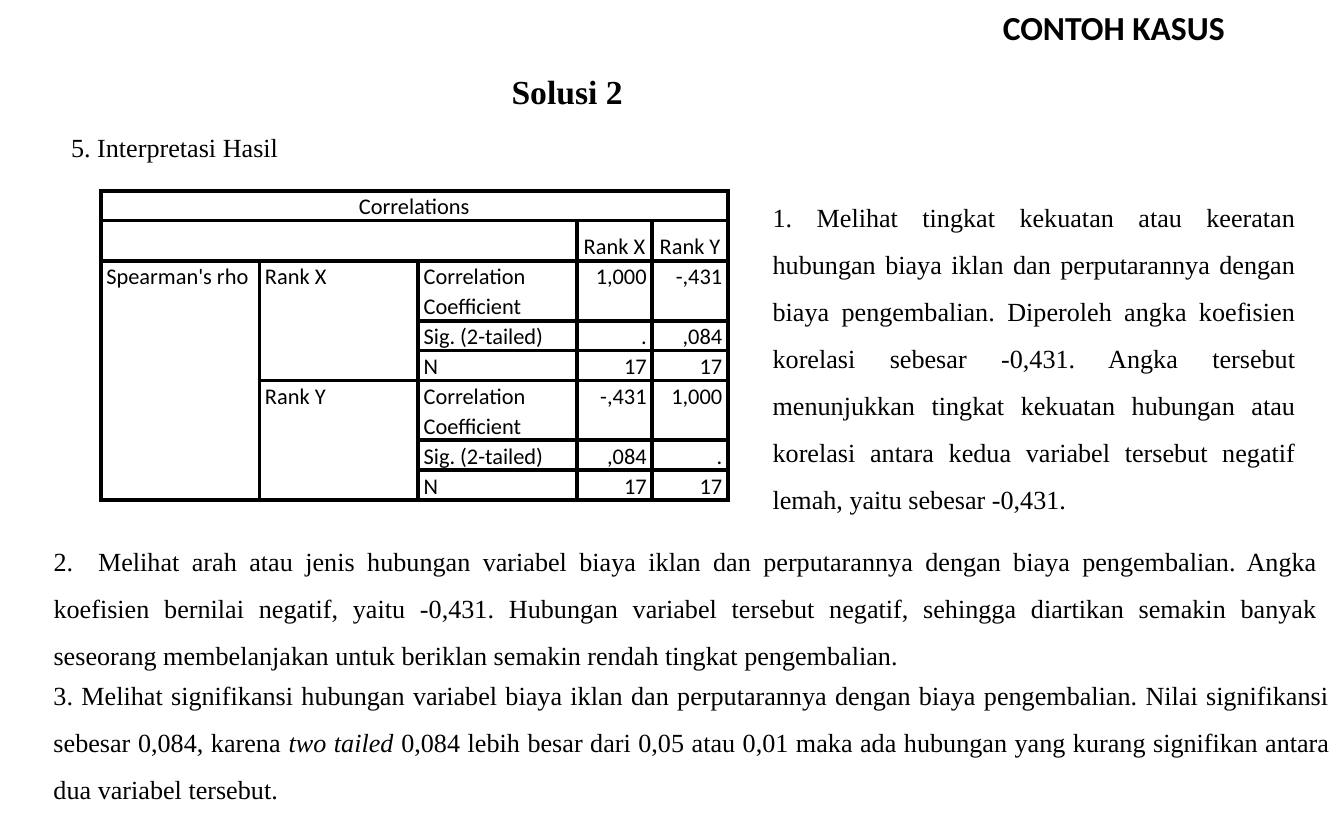
from lxml.etree import SubElement
from pptx import Presentation
from pptx.dml.color import RGBColor
from pptx.enum.text import MSO_ANCHOR, MSO_AUTO_SIZE, PP_ALIGN
from pptx.oxml.ns import qn
from pptx.util import Pt

COLORS = {"ink": "000000", "paper": "FFFFFF"}
SERIF = "Times New Roman"
SANS = "Calibri"


def write(frame, text, font=SERIF, size=14, bold=False, align=PP_ALIGN.JUSTIFY,
          anchor=MSO_ANCHOR.TOP, spacing=1.5, after=0, level=0, indent=0):
    frame.word_wrap = True
    frame.vertical_anchor = anchor
    para = frame.paragraphs[0]
    para.alignment = align
    para.line_spacing = spacing
    para.space_after = Pt(after)
    para.level = level
    if indent:
        properties = para._p.get_or_add_pPr()
        properties.set("marL", str(Pt(indent)))
        properties.set("indent", "0")
    for number, part in enumerate(text.split("*")):
        if part:
            span = para.add_run()
            span.text = part
            span.font.name = font
            span.font.size = Pt(size)
            span.font.bold = bold
            span.font.italic = number % 2 == 1
            span.font.color.rgb = RGBColor.from_string(COLORS["ink"])


deck = Presentation()
deck.slide_width, deck.slide_height = Pt(720), Pt(450)
page = deck.slides.add_slide(deck.slide_layouts[5])
page.background.fill.solid()
page.background.fill.fore_color.rgb = RGBColor.from_string(COLORS["paper"])

title = page.shapes.title
title.left, title.top, title.width, title.height = Pt(530), Pt(0), Pt(362), Pt(29)
title.text_frame.auto_size = MSO_AUTO_SIZE.NONE
write(title.text_frame, "CONTOH KASUS", font=SANS, size=18, bold=True,
      align=PP_ALIGN.LEFT, spacing=1.0)

heading = {"size": 18, "bold": True, "after": 8}
finding = {"level": 3, "indent": 108}
boxes = [
    (267, 23.8, 446.4, 36.7, "Solusi 2", heading),
    (31, 58.3, 446.4, 30.2, "5. Interpretasi Hasil", {"after": 8}),
    (298.8, 95.8, 402.5, 202.3,
     "1. Melihat tingkat kekuatan atau keeratan hubungan biaya iklan dan perputarannya "
     "dengan biaya pengembalian. Diperoleh angka koefisien korelasi sebesar -0,431. "
     "Angka tersebut menunjukkan tingkat kekuatan hubungan atau korelasi antara kedua "
     "variabel tersebut negatif lemah, yaitu sebesar -0,431.", finding),
    (-86.4, 352.1, 806.4, 80.6,
     "3. Melihat signifikansi hubungan variabel biaya iklan dan perputarannya dengan "
     "biaya pengembalian. Nilai signifikansi sebesar 0,084, karena *two tailed *0,084 "
     "lebih besar dari 0,05 atau 0,01 maka ada hubungan yang kurang signifikan antara "
     "dua variabel tersebut.", finding),
    (-86.4, 280.1, 799.9, 80.6,
     "2.  Melihat arah atau jenis hubungan variabel biaya iklan dan perputarannya dengan "
     "biaya pengembalian. Angka koefisien bernilai negatif, yaitu -0,431. Hubungan "
     "variabel tersebut negatif, sehingga diartikan semakin banyak seseorang "
     "membelanjakan untuk beriklan semakin rendah tingkat pengembalian.", finding),
]
for left, top, width, height, text, style in boxes:
    box = page.shapes.add_textbox(Pt(left), Pt(top), Pt(width), Pt(height))
    write(box.text_frame, text, **style)

rows = [
    ["Correlations", "", "", "", ""],
    ["", "", "", "Rank X", "Rank Y"],
    ["Spearman's rho", "Rank X", "Correlation Coefficient", "1,000", "-,431"],
    ["", "", "Sig. (2-tailed)", ".", ",084"],
    ["", "", "N", "17", "17"],
    ["", "Rank Y", "Correlation Coefficient", "-,431", "1,000"],
    ["", "", "Sig. (2-tailed)", ",084", "."],
    ["", "", "N", "17", "17"],
]
widths = [85, 85, 85, 40.5, 40.5]
line = 16
heights = [line * 2 if row[2].startswith("Correlation") else line for row in rows]
table = page.shapes.add_table(len(rows), len(widths), Pt(54), Pt(102.2),
                              Pt(sum(widths)), Pt(sum(heights))).table
table.first_row = table.horz_banding = False
for column, width in zip(table.columns, widths):
    column.width = Pt(width)
for row, height in zip(table.rows, heights):
    row.height = Pt(height)
for first, last in [((0, 0), (0, 4)), ((1, 0), (1, 2)), ((2, 0), (7, 0)),
                    ((2, 1), (4, 1)), ((5, 1), (7, 1))]:
    table.cell(*first).merge(table.cell(*last))

for r, row in enumerate(rows):
    for c, text in enumerate(row):
        cell = table.cell(r, c)
        cell.margin_left = cell.margin_right = Pt(3)
        cell.margin_top = cell.margin_bottom = Pt(0)
        align = PP_ALIGN.CENTER if r < 2 else PP_ALIGN.RIGHT if c > 2 else PP_ALIGN.LEFT
        write(cell.text_frame, text, font=SANS, size=12, align=align,
              spacing=Pt(line), after=8)
        cell.vertical_anchor = {0: MSO_ANCHOR.MIDDLE, 1: MSO_ANCHOR.BOTTOM}.get(r, MSO_ANCHOR.TOP)
        properties = cell._tc.get_or_add_tcPr()
        for side in ("lnL", "lnR", "lnT", "lnB"):
            border = SubElement(properties, qn(f"a:{side}"), w=str(Pt(2.25)))
            fill = SubElement(border, qn("a:solidFill"))
            SubElement(fill, qn("a:srgbClr"), val=COLORS["ink"])
        cell.fill.background()

deck.save("out.pptx")
